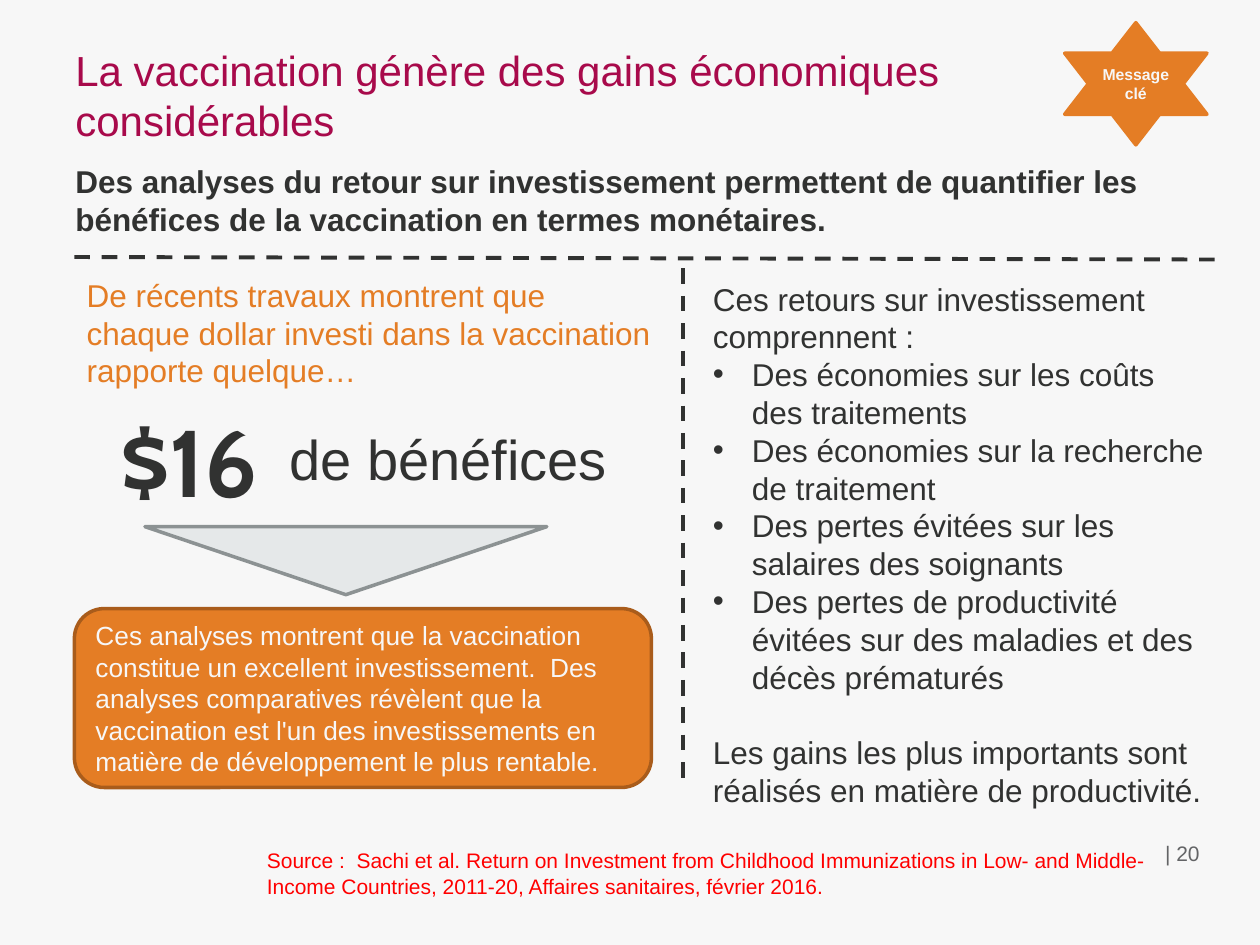
from lxml import etree
from pptx import Presentation
from pptx.dml.color import RGBColor
from pptx.enum.dml import MSO_LINE
from pptx.enum.shapes import MSO_CONNECTOR, MSO_SHAPE
from pptx.enum.text import MSO_ANCHOR, PP_ALIGN
from pptx.oxml.ns import qn
from pptx.util import Inches, Pt

COLORS = {
    "background": "F7F7F7", "title": "A80A4B", "text": "313231",
    "orange": "E47D25", "dark_orange": "A95C1B", "arrow": "E5E8E9",
    "arrow_line": "8C9293", "number": "636466", "source": "FF0000",
}


def write(box, lines, size, color, bold=False, font="Arial",
          align=PP_ALIGN.LEFT, anchor=MSO_ANCHOR.TOP):
    """Fill a box with one paragraph per line, all in one format."""
    frame = box.text_frame
    frame.text = "\n".join(lines)
    frame.word_wrap = True
    frame.vertical_anchor = anchor
    for para in frame.paragraphs:
        para.alignment = align
        for span in para.runs:
            span.font.name = font
            span.font.size = Pt(size)
            span.font.bold = bold
            span.font.color.rgb = RGBColor.from_string(COLORS[color])
    return frame


def add_box(kind, left, top, width, height, fill=None, line=None):
    """Add a preset shape, or a text box if kind is None."""
    place = [Inches(n) for n in (left, top, width, height)]
    if kind is None:
        return page.shapes.add_textbox(*place)
    box = page.shapes.add_shape(kind, *place)
    box.shadow.inherit = False
    box.fill.solid()
    box.fill.fore_color.rgb = RGBColor.from_string(COLORS[fill])
    box.line.color.rgb = RGBColor.from_string(COLORS[line])
    box.line.width = Pt(2)
    return box


deck = Presentation()
deck.slide_width, deck.slide_height = Inches(10), Inches(7.5)
page = deck.slides.add_slide(deck.slide_layouts[6])
page.background.fill.solid()
page.background.fill.fore_color.rgb = RGBColor.from_string(COLORS["background"])

# Title, page number and introduction
write(add_box(None, 0.5, 0.3, 9, 1.25),
      ["La vaccination génère des gains économiques considérables"], 24, "title")
write(add_box(None, 7.29, 6.57, 2.33, 0.4), ["| 20"], 12, "number",
      align=PP_ALIGN.RIGHT, anchor=MSO_ANCHOR.MIDDLE)
write(add_box(None, 0.5, 1.24, 9.03, 0.71),
      ["Des analyses du retour sur investissement permettent de quantifier les "
       "bénéfices de la vaccination en termes monétaires."], 18, "text", bold=True)

# Dashed dividers
for x1, y1, x2, y2 in [(0.59, 2.04, 9.69, 2.06), (5.42, 2.13, 5.42, 6.21)]:
    divider = page.shapes.add_connector(
        MSO_CONNECTOR.STRAIGHT, Inches(x1), Inches(y1), Inches(x2), Inches(y2))
    divider.line.color.rgb = RGBColor.from_string(COLORS["text"])
    divider.line.width = Pt(2.25)
    divider.line.dash_style = MSO_LINE.DASH
    etree.SubElement(divider._element.spPr, qn("a:effectLst"))

# Left column: the return on each dollar
write(add_box(None, 0.59, 2.14, 4.7, 1.01),
      ["De récents travaux montrent que chaque dollar investi dans la "
       "vaccination rapporte quelque…"], 18, "orange")
write(add_box(None, 0.48, 3.15, 2.04, 1.01), ["$16"], 54, "text",
      bold=True, font="Cabin", align=PP_ALIGN.CENTER)
write(add_box(None, 2.2, 3.32, 2.77, 0.64), ["de bénéfices"], 32, "text")
add_box(MSO_SHAPE.FLOWCHART_MERGE, 1.15, 4.18, 3.19, 0.54, "arrow", "arrow_line")
conclusion = add_box(MSO_SHAPE.ROUNDED_RECTANGLE, 0.59, 4.83, 4.58, 1.42,
                     "orange", "dark_orange")
write(conclusion,
      ["Ces analyses montrent que la vaccination constitue un excellent "
       "investissement.  Des analyses comparatives révèlent que la vaccination "
       "est l'un des investissements en matière de développement le plus "
       "rentable."], 15, "background", anchor=MSO_ANCHOR.MIDDLE)

# Right column: what the returns include
returns = write(add_box(None, 5.56, 2.17, 4.13, 4.04), [
    "Ces retours sur investissement comprennent :",
    "Des économies sur les coûts des traitements",
    "Des économies sur la recherche de traitement",
    "Des pertes évitées sur les salaires des soignants",
    "Des pertes de productivité évitées sur des maladies et des décès prématurés",
    "Les gains les plus importants sont réalisés en matière de productivité.",
], 18, "text")
for para in returns.paragraphs[1:-1]:
    props = para._p.get_or_add_pPr()
    props.set("marL", str(Inches(0.31)))
    props.set("indent", str(Inches(-0.31)))
    etree.SubElement(props, qn("a:buFont"), typeface="Arial")
    etree.SubElement(props, qn("a:buChar"), char="•")
returns.paragraphs[-1].space_before = Pt(21.6)

# Source
write(add_box(None, 2.02, 6.68, 7.23, 0.5), [
    "Source :  Sachi et al. Return on Investment from Childhood Immunizations "
    "in Low- and Middle-",
    "Income Countries, 2011-20, Affaires sanitaires, février 2016.",
], 12, "source")

# Key message star
star = add_box(MSO_SHAPE.STAR_6_POINT, 8.45, 0.18, 1.13, 0.97, "orange", "orange")
label = write(star, ["Message clé"], 9, "background", bold=True,
              align=PP_ALIGN.CENTER, anchor=MSO_ANCHOR.MIDDLE)
label.margin_left = label.margin_right = Inches(0.05)

deck.save("out.pptx")
